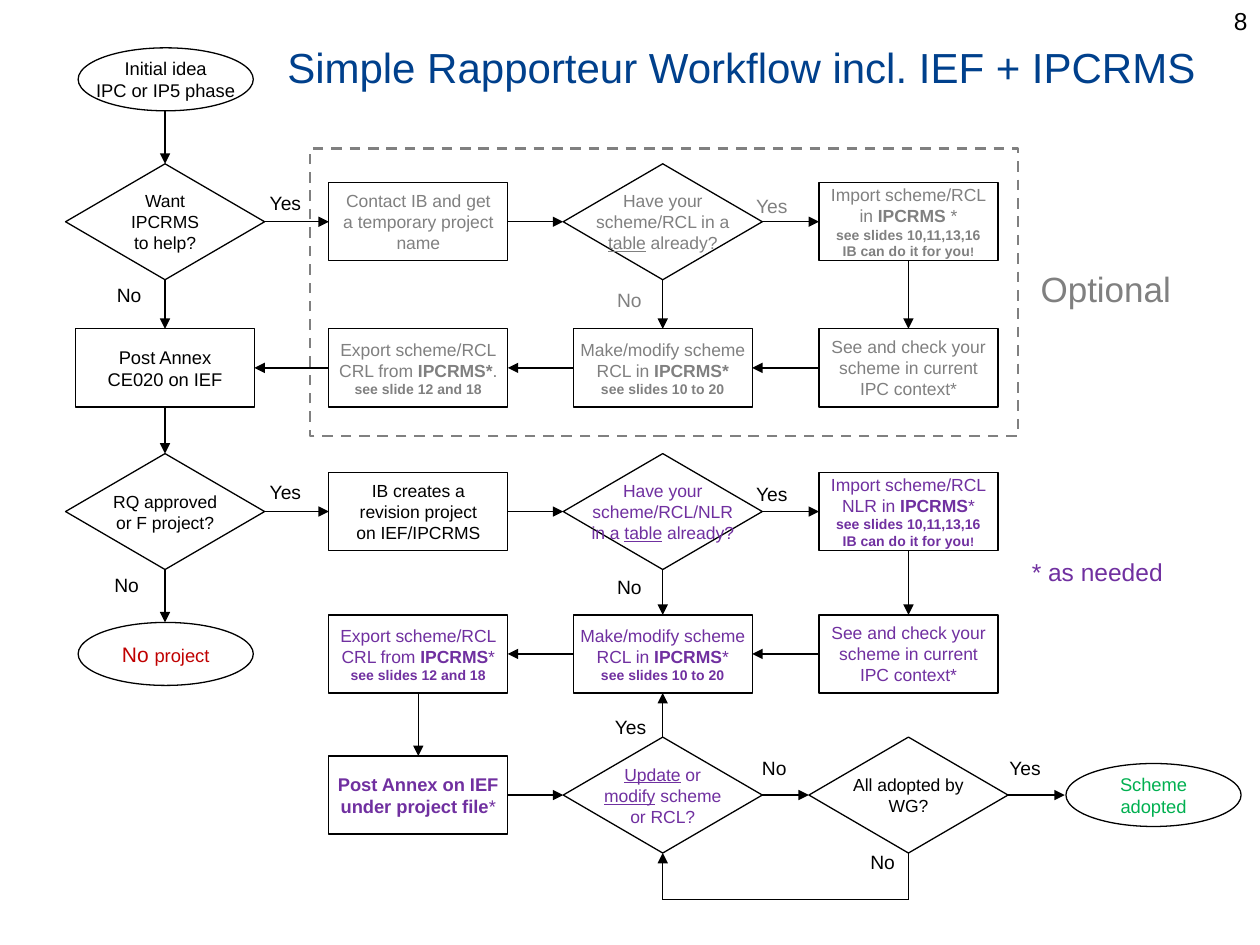
from lxml import etree
from pptx import Presentation
from pptx.dml.color import RGBColor
from pptx.enum.dml import MSO_LINE
from pptx.enum.shapes import MSO_CONNECTOR, MSO_SHAPE
from pptx.enum.text import MSO_ANCHOR, PP_ALIGN
from pptx.oxml.ns import qn
from pptx.util import Emu, Pt

PX = 9144  # 100 px to the inch
FONT = "Arial"
COLORS = {"black": "000000", "gray": "808080", "purple": "7030A0",
          "red": "C00000", "green": "00B050", "blue": "00408C"}
LEFT, CENTER, RIGHT = PP_ALIGN.LEFT, PP_ALIGN.CENTER, PP_ALIGN.RIGHT
TOP, MIDDLE = MSO_ANCHOR.TOP, MSO_ANCHOR.MIDDLE

# Node kinds: preset shape, width, height
KINDS = {
    "oval": (MSO_SHAPE.OVAL, 139, 50),
    "box": (MSO_SHAPE.RECTANGLE, 142, 62),
    "choice": (MSO_SHAPE.DIAMOND, 158, 92),
}
COLUMN_CENTERS = {"intake": 131, "export": 332, "scheme": 526, "check": 721, "end": 915}
ROW_CENTERS = [63, 176, 292, 406, 519, 631]

# Run styles: bold, underline, size (None keeps the paragraph value)
STYLES = {
    "bold": (True, None, None),
    "underline": (None, True, None),
    "note": (True, None, 8),
    "mark": (True, None, 7),
    "large": (None, None, 12),
}

TITLE = "Simple Rapporteur Workflow incl. IEF + IPCRMS"
IPCRMS = ("IPCRMS", "bold")
TABLE = ("table", "underline")
IMPORT_NOTE = [("see slides 10,11,13,16\nIB can do it for you", "note"), ("!", "mark")]
CHECK = ["See and check your\nscheme in current\nIPC context*"]

# Nodes: column, row, kind, colour, size, runs
NODES = {
    "idea": ("intake", 0, "oval", "black", 10.5, ["Initial idea\nIPC or IP5 phase"]),
    "help": ("intake", 1, "choice", "black", 10, ["Want\nIPCRMS\nto help?"]),
    "annex": ("intake", 2, "box", "black", 10.5, ["Post Annex\nCE020 on IEF"]),
    "approved": ("intake", 3, "choice", "black", 10, ["RQ approved\nor F project?"]),
    "no project": ("intake", 4, "oval", "red", 10.5, [("No ", "large"), "project"]),

    "contact": ("export", 1, "box", "gray", 10,
                ["Contact IB and get\na temporary project\nname"]),
    "have early": ("scheme", 1, "choice", "gray", 10,
                   ["Have your\nscheme/RCL in a\n", TABLE, " already?"]),
    "import early": ("check", 1, "box", "gray", 10,
                     ["Import scheme/RCL\nin ", IPCRMS, " *\n", *IMPORT_NOTE]),
    "check early": ("check", 2, "box", "gray", 10, CHECK),
    "make early": ("scheme", 2, "box", "gray", 10,
                   ["Make/modify scheme\nRCL in ", ("IPCRMS*\n", "bold"),
                    ("see slides 10 to 20", "note")]),
    "export early": ("export", 2, "box", "gray", 10,
                     ["Export scheme/RCL\nCRL from ", ("IPCRMS*", "bold"), ".\n",
                      ("see slide 12 and 18", "note")]),

    "create": ("export", 3, "box", "black", 10,
               ["IB creates a\nrevision project\non IEF/IPCRMS"]),
    "have": ("scheme", 3, "choice", "purple", 10,
             ["Have your\nscheme/RCL/NLR\nin a ", TABLE, " already?"]),
    "import": ("check", 3, "box", "purple", 10,
               ["Import scheme/RCL\nNLR in ", IPCRMS, "*\n", *IMPORT_NOTE]),
    "check": ("check", 4, "box", "purple", 10, CHECK),
    "make": ("scheme", 4, "box", "purple", 10,
             ["Make/modify scheme\nRCL in ", IPCRMS, "*\n",
              ("see slides 10 to 20", "note")]),
    "export": ("export", 4, "box", "purple", 10,
               ["Export scheme/RCL\nCRL from ", IPCRMS, "*\n",
                ("see slides 12 and 18", "note")]),

    "post": ("export", 5, "box", "purple", 10.5,
             [("Post Annex on IEF\nunder project file", "bold"), "*"]),
    "update": ("scheme", 5, "choice", "purple", 10,
               [("Update", "underline"), " or\n", ("modify", "underline"),
                " scheme\nor RCL?"]),
    "adopted?": ("check", 5, "choice", "black", 10, ["All adopted by\nWG?"]),
    "adopted": ("end", 5, "oval", "green", 10.5, ["Scheme\nadopted"]),
}

# Chains of nodes joined by arrows
FLOWS = [
    ["idea", "help", "annex", "approved", "no project"],
    ["help", "contact", "have early", "import early", "check early",
     "make early", "export early", "annex"],
    ["have early", "make early"],
    ["approved", "create", "have", "import", "check", "make", "export",
     "post", "update", "adopted?", "adopted"],
    ["have", "make"],
    ["update", "make"],
]
LOOP_Y = 714

# Answers beside the arrows: text, left, top, colour
ANSWERS = [
    ("Yes", 202, 147, "black"), ("No", 78, 220, "black"),
    ("Yes", 588, 149, "gray"), ("No", 475, 224, "gray"),
    ("Yes", 202, 376, "black"), ("No", 76, 450, "black"),
    ("Yes", 588, 378, "black"), ("No", 475, 452, "black"),
    ("Yes", 476, 563, "black"), ("No", 590, 595, "black"),
    ("Yes", 789, 595, "black"), ("No", 676, 670, "black"),
]
ANSWER_SIZE = (49, 27)
OPTIONAL_FRAME = (246, 118, 562, 228)
# Other texts: text, place, size, colour, alignment
REMARKS = [
    ("8", (767, 0, 233, 52), 14, "black", RIGHT),
    ("Optional", (816, 207, 145, 49), 20, "gray", LEFT),
    ("* as needed", (809, 437, 171, 49), 14, "purple", LEFT),
]


def px(*values):
    return [Emu(v * PX) for v in values]


def rgb(color):
    return RGBColor.from_string(COLORS[color])


def write(shape, runs, size, color, align, anchor, wrap=True):
    frame = shape.text_frame
    frame.word_wrap = wrap
    frame.vertical_anchor = anchor
    paragraph = frame.paragraphs[0]
    paragraph.alignment = align
    paragraph.space_before = Pt(0)
    font = paragraph.font
    font.name, font.size, font.color.rgb = FONT, Pt(size), rgb(color)
    for item in runs:
        text, style = (item, None) if isinstance(item, str) else item
        bold, underline, run_size = STYLES.get(style, (None, None, None))
        for i, line in enumerate(text.split("\n")):
            if i:
                paragraph.add_line_break()
            if line:
                run = paragraph.add_run()
                run.text = line
                run.font.bold, run.font.underline = bold, underline
                run.font.size = Pt(run_size) if run_size else None


def add_outline(slide, preset, place, color="black", width=0.75):
    shape = slide.shapes.add_shape(preset, *px(*place))
    shape.shadow.inherit = False
    shape.fill.background()
    shape.line.color.rgb, shape.line.width = rgb(color), Pt(width)
    return shape


def add_text(slide, text, place, size, color, align):
    write(slide.shapes.add_textbox(*px(*place)), [text], size, color, align, TOP)


def add_line(slide, start, end, arrow=True):
    line = slide.shapes.add_connector(MSO_CONNECTOR.STRAIGHT, *px(*start, *end))
    line.line.color.rgb, line.line.width = rgb("black"), Pt(0.75)
    if arrow:
        etree.SubElement(line.line._get_or_add_ln(), qn("a:tailEnd"), type="triangle")
    etree.SubElement(line._element.spPr, qn("a:effectLst"))


def geometry(name):
    column, row, kind = NODES[name][:3]
    return COLUMN_CENTERS[column], ROW_CENTERS[row], *KINDS[kind][1:]


def edge(name, toward):
    """Middle of the side of a node that faces another node."""
    x, y, w, h = geometry(name)
    other_x, other_y = geometry(toward)[:2]
    if x == other_x:
        return x, y + (h // 2 if other_y > y else -h // 2)
    return x + (w // 2 if other_x > x else -w // 2), y


def main():
    prs = Presentation()
    prs.slide_width, prs.slide_height = px(1000, 750)
    slide = prs.slides.add_slide(prs.slide_layouts[5])

    # Title
    title = slide.shapes.title
    title.left, title.top, title.width, title.height = px(218, 18, 743, 70)
    write(title, [TITLE], 24, "blue", LEFT, MIDDLE)

    # Nodes
    for name, (_, _, kind, color, size, runs) in NODES.items():
        x, y, w, h = geometry(name)
        node = add_outline(slide, KINDS[kind][0], (x - w // 2, y - h // 2, w, h))
        write(node, runs, size, color, CENTER, MIDDLE, wrap=False)

    # Arrows
    for flow in FLOWS:
        for start, end in zip(flow, flow[1:]):
            add_line(slide, edge(start, end), edge(end, start))

    # Loop back from adoption to update
    x, y, _, h = geometry("adopted?")
    back_x = geometry("update")[0]
    bottom = y + h // 2
    add_line(slide, (x, bottom), (x, LOOP_Y), arrow=False)
    add_line(slide, (x, LOOP_Y), (back_x, LOOP_Y), arrow=False)
    add_line(slide, (back_x, LOOP_Y), (back_x, bottom))

    # Answers, optional frame and remarks
    for text, left, top, color in ANSWERS:
        add_text(slide, text, (left, top, *ANSWER_SIZE), 11, color, CENTER)
    frame = add_outline(slide, MSO_SHAPE.RECTANGLE, OPTIONAL_FRAME, "gray", 1.5)
    frame.line.dash_style = MSO_LINE.DASH
    for remark in REMARKS:
        add_text(slide, *remark)

    prs.save("out.pptx")


if __name__ == "__main__":
    main()
